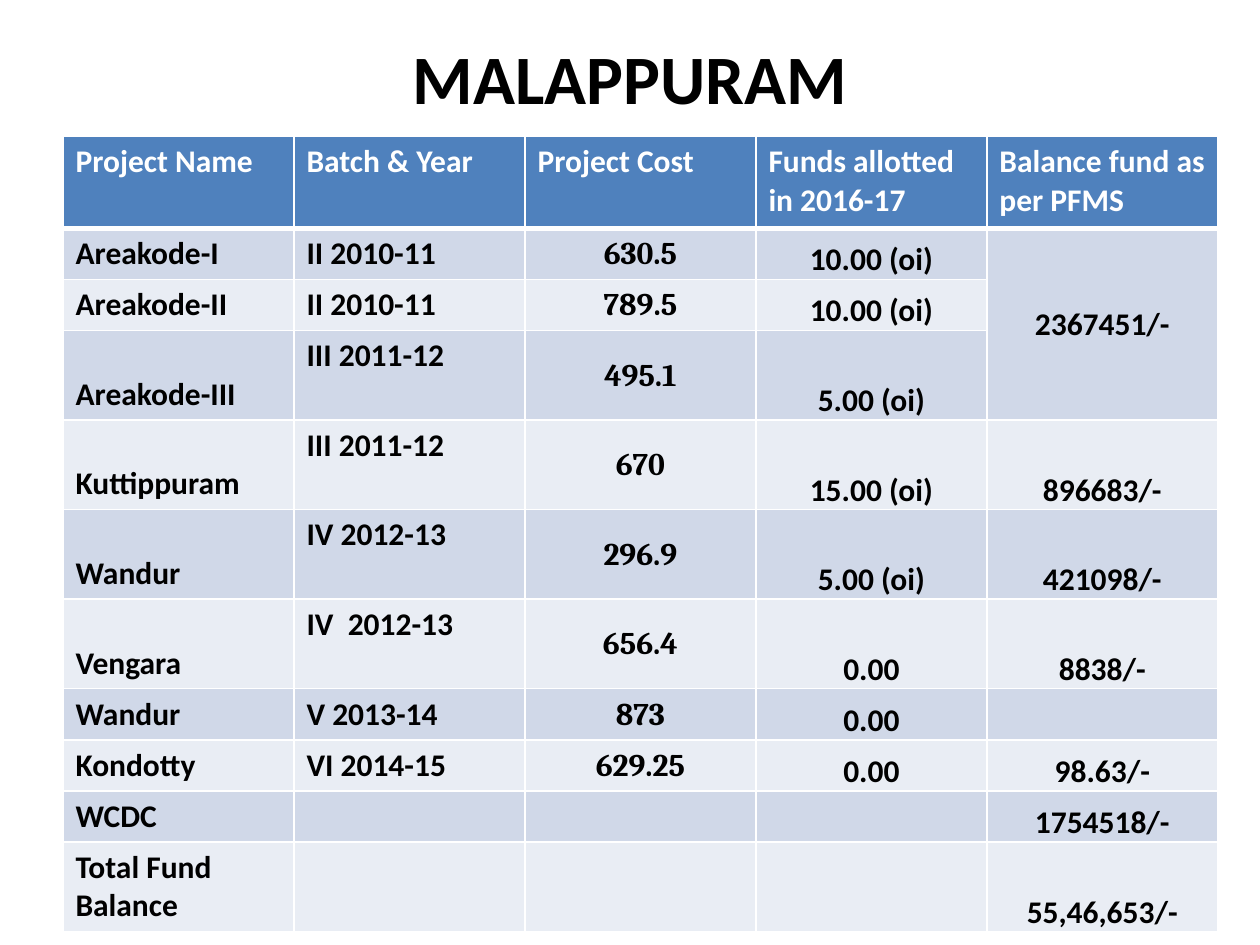
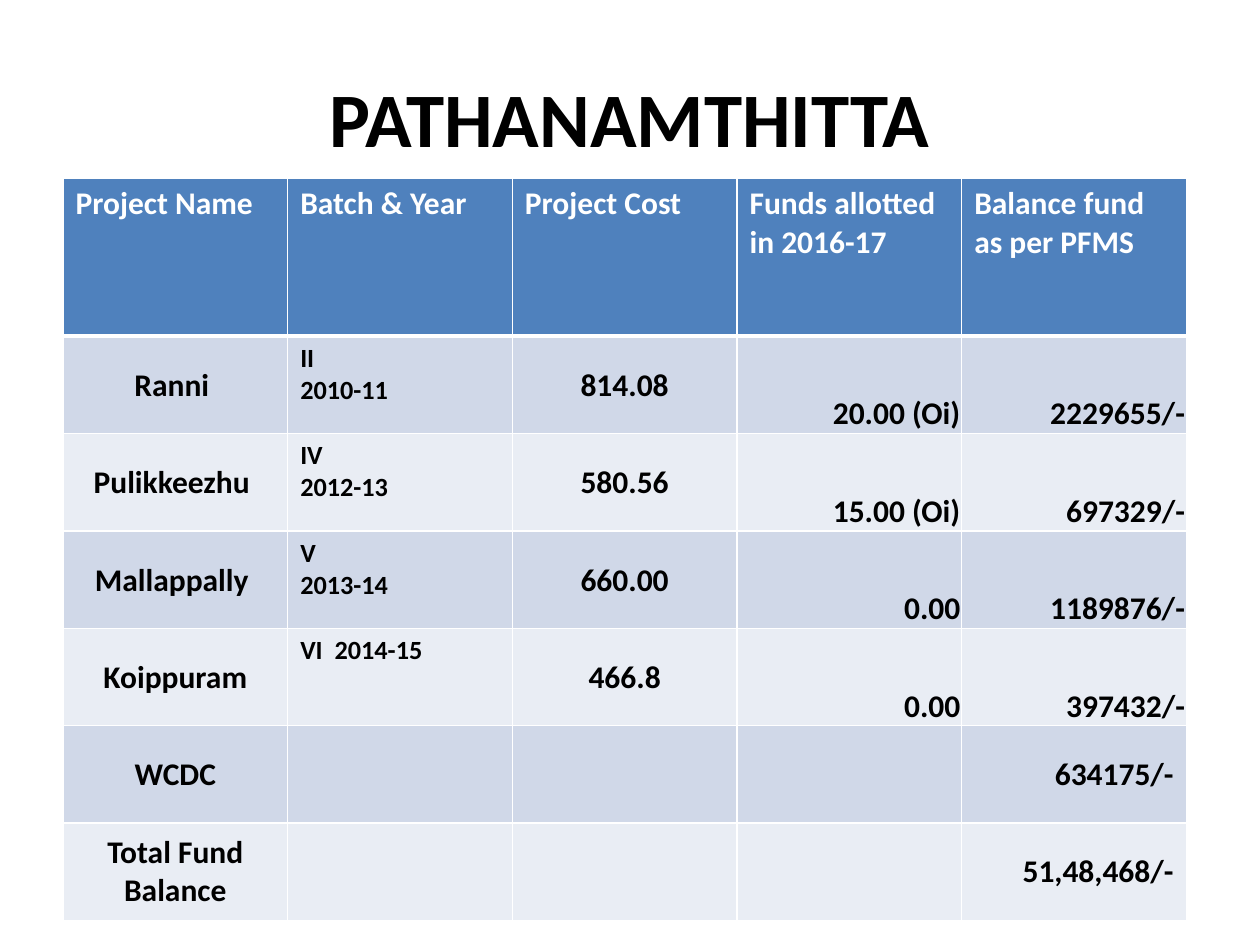
from dataclasses import dataclass

from lxml.etree import SubElement
from pptx import Presentation
from pptx.dml.color import RGBColor
from pptx.enum.text import MSO_ANCHOR, MSO_AUTO_SIZE, PP_ALIGN
from pptx.oxml.ns import qn
from pptx.util import Pt

WHITE = RGBColor(0xFF, 0xFF, 0xFF)
BLACK = RGBColor(0x00, 0x00, 0x00)
HEADER_BLUE = RGBColor(0x4F, 0x81, 0xBD)
BANDS = RGBColor(0xD0, 0xD8, 0xE8), RGBColor(0xE9, 0xED, 0xF4)
TITLE_ONLY = 5
THIN, THICK = Pt(1), Pt(3)


@dataclass
class CellStyle:
    align: PP_ALIGN = PP_ALIGN.LEFT
    anchor: MSO_ANCHOR = MSO_ANCHOR.TOP
    snug: bool = False
    size: float = 18
    font: str = "Calibri"
    color: RGBColor = BLACK


HEADER = CellStyle(color=WHITE)
PLAIN = CellStyle()
SMALL = CellStyle(size=15)
LOW_LEFT = CellStyle(anchor=MSO_ANCHOR.BOTTOM)
MIDDLE = CellStyle(PP_ALIGN.CENTER, MSO_ANCHOR.MIDDLE, snug=True)
COST = CellStyle(PP_ALIGN.CENTER, MSO_ANCHOR.MIDDLE, snug=True, font="Cambria")
LOW_CENTER = CellStyle(PP_ALIGN.CENTER, MSO_ANCHOR.BOTTOM, snug=True)
LOW_RIGHT = CellStyle(PP_ALIGN.RIGHT, MSO_ANCHOR.BOTTOM, snug=True)
SUMMARY_NAME = CellStyle(PP_ALIGN.CENTER, MSO_ANCHOR.MIDDLE)
SUMMARY_BALANCE = CellStyle(PP_ALIGN.RIGHT, MSO_ANCHOR.MIDDLE)

HEADINGS = ["Project Name", "Batch & Year", "Project Cost",
            "Funds allotted in 2016-17", "Balance fund as per PFMS"]

MALAPPURAM = [
    ["Areakode-I", "II 2010-11", "630.5", "10.00 (oi)", "2367451/-"],
    ["Areakode-II", "II 2010-11", "789.5", "10.00 (oi)", ""],
    ["Areakode-III", "III 2011-12", "495.1", "5.00 (oi)", ""],
    ["Kuttippuram", "III 2011-12", "670", "15.00 (oi)", "896683/-"],
    ["Wandur", "IV 2012-13", "296.9", "5.00 (oi)", "421098/-"],
    ["Vengara", "IV  2012-13", "656.4", "0.00", "8838/-"],
    ["Wandur", "V 2013-14", "873", "0.00", ""],
    ["Kondotty", "VI 2014-15", "629.25", "0.00", "98.63/-"],
    ["WCDC", "", "", "", "1754518/-"],
    ["Total Fund Balance", "", "", "", "55,46,653/-"],
]

PATHANAMTHITTA = [
    ["Ranni ", "II \v2010-11", "814.08", "20.00 (Oi)", "2229655/-"],
    ["Pulikkeezhu ", "IV\n2012-13", "580.56", "15.00 (Oi)", "697329/-"],
    ["Mallappally ", "V\n2013-14", "660.00", "0.00", "1189876/-"],
    ["Koippuram", "VI  2014-15", "466.8", "0.00", "397432/-"],
    ["WCDC", "", "", "", "634175/-"],
    ["Total Fund Balance", "", "", "", "51,48,468/-"],
]


class FundDeck:
    def __init__(self):
        self.deck = Presentation()
        self.deck.slide_width, self.deck.slide_height = Pt(720), Pt(540)
        self.page = None

    def add_page(self, title, height, size):
        self.page = self.deck.slides.add_slide(self.deck.slide_layouts[TITLE_ONLY])
        box = self.page.shapes.title
        box.left, box.top, box.width, box.height = Pt(36), Pt(21.6), Pt(648), Pt(height)
        frame = box.text_frame
        frame.text = title
        frame.auto_size = MSO_AUTO_SIZE.NONE
        frame.vertical_anchor = MSO_ANCHOR.MIDDLE
        self.format_text(frame, CellStyle(PP_ALIGN.CENTER, size=size))

    def format_text(self, frame, style):
        for paragraph in frame.paragraphs:
            paragraph.alignment = style.align
            for span in paragraph.runs:
                span.font.name = style.font
                span.font.size = Pt(style.size)
                span.font.bold = True
                span.font.color.rgb = style.color

    def add_borders(self, cell, top, bottom):
        properties = cell._tc.get_or_add_tcPr()
        sides = {"a:lnL": THIN, "a:lnR": THIN, "a:lnT": top, "a:lnB": bottom}
        for index, (side, width) in enumerate(sides.items()):
            line = SubElement(properties, qn(side), w=str(width))
            fill = SubElement(line, qn("a:solidFill"))
            SubElement(fill, qn("a:srgbClr"), val=str(WHITE))
            properties.insert(index, line)

    def fill_cell(self, cell, text, style, color):
        cell.fill.solid()
        cell.fill.fore_color.rgb = color
        if not text:
            return
        cell.text_frame.text = text
        cell.vertical_anchor = style.anchor
        if style.snug:
            cell.margin_left = cell.margin_top = cell.margin_right = Pt(0.75)
            cell.margin_bottom = 0
        self.format_text(cell.text_frame, style)

    def add_table(self, top, column_width, heights, rows, row_styles):
        rows = [HEADINGS] + rows
        row_styles = [[HEADER] * len(HEADINGS)] + row_styles
        table = self.page.shapes.add_table(
            len(rows), len(HEADINGS), Pt(36), Pt(top),
            Pt(column_width * len(HEADINGS)), Pt(sum(heights))).table
        for column in table.columns:
            column.width = Pt(column_width)
        for number, (texts, styles) in enumerate(zip(rows, row_styles)):
            table.rows[number].height = Pt(heights[number])
            color = BANDS[(number - 1) % 2] if number else HEADER_BLUE
            for column, (text, style) in enumerate(zip(texts, styles)):
                cell = table.cell(number, column)
                self.fill_cell(cell, text, style, color)
                self.add_borders(cell, THICK if number == 1 else THIN,
                                 THIN if number else THICK)
        return table


def main():
    funds = FundDeck()

    funds.add_page("MALAPPURAM", 44.6, 39.6)
    one_line, two_lines = 29.2, 51.2
    heights = [52.4] + [one_line] * 2 + [two_lines] * 4 + [one_line] * 3 + [two_lines]
    project = [LOW_LEFT, PLAIN, COST, LOW_CENTER]
    table = funds.add_table(78, 132, heights, MALAPPURAM,
                            [project + [MIDDLE]] + [project + [LOW_CENTER]] * 9)
    table.cell(1, 4).merge(table.cell(3, 4))

    funds.add_page("PATHANAMTHITTA", 90, 44)
    project = [MIDDLE, SMALL, MIDDLE, LOW_RIGHT, LOW_RIGHT]
    summary = [SUMMARY_NAME, PLAIN, PLAIN, PLAIN, SUMMARY_BALANCE]
    funds.add_table(102, 128.4, [90] + [55.7] * 6, PATHANAMTHITTA,
                    [project] * 4 + [summary] * 2)

    funds.deck.save("out.pptx")


if __name__ == "__main__":
    main()
